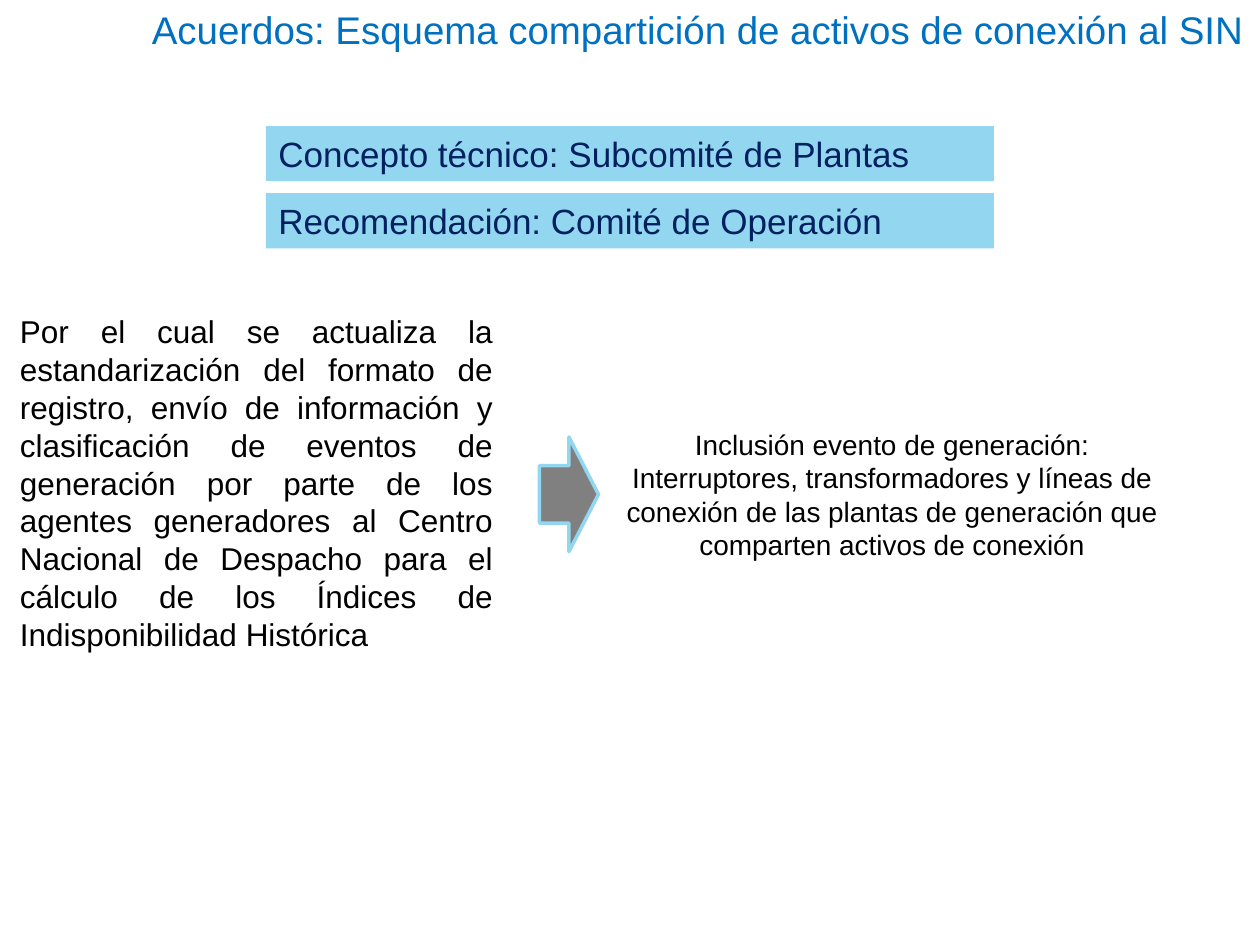
from pptx import Presentation
from pptx.dml.color import RGBColor
from pptx.enum import shapes, text
from pptx.util import Pt

BLUE = RGBColor(0x00, 0x70, 0xC0)
NAVY = RGBColor(0x00, 0x20, 0x60)
SKY = RGBColor(0x92, 0xD6, 0xF0)
GRAY = RGBColor(0x80, 0x80, 0x80)
BLACK = RGBColor(0x00, 0x00, 0x00)


def write(shape, content, size, color, alignment):
    frame = shape.text_frame
    frame.text = content
    frame.word_wrap = True
    frame.auto_size = text.MSO_AUTO_SIZE.NONE
    frame.vertical_anchor = text.MSO_ANCHOR.TOP
    paragraph = frame.paragraphs[0]
    paragraph.alignment = alignment
    font = paragraph.runs[0].font
    font.name = "Arial"
    font.size = Pt(size)
    font.color.rgb = color


presentation = Presentation()
presentation.slide_width = Pt(720)
presentation.slide_height = Pt(540)
slide = presentation.slides.add_slide(presentation.slide_layouts[5])

title = slide.shapes.title
title.left, title.top, title.width, title.height = Pt(67.7), Pt(0), Pt(650), Pt(34)
write(title, "Acuerdos: Esquema compartición de activos de conexión al SIN",
      22, BLUE, text.PP_ALIGN.RIGHT)

# Bodies that issue the concept and the recommendation
bars = slide.shapes.add_group_shape()
bar_labels = ["Concepto técnico: Subcomité de Plantas",
              "Recomendación: Comité de Operación"]
for row, label in enumerate(bar_labels):
    bar = bars.shapes.add_shape(shapes.MSO_SHAPE.RECTANGLE, Pt(152),
                                Pt(72 + 38.4 * row), Pt(416), Pt(31.5))
    bar.shadow.inherit = False
    bar.fill.solid()
    bar.fill.fore_color.rgb = SKY
    bar.line.fill.background()
    write(bar, label, 20, NAVY, text.PP_ALIGN.JUSTIFY)

# Agreement, arrow and its outcome
agreement = slide.shapes.add_textbox(Pt(4.3), Pt(175), Pt(284.4), Pt(204))
write(agreement,
      "Por el cual se actualiza la estandarización del formato de registro, "
      "envío de información y clasificación de eventos de generación por parte "
      "de los agentes generadores al Centro Nacional de Despacho para el cálculo "
      "de los Índices de Indisponibilidad Histórica",
      18, BLACK, text.PP_ALIGN.JUSTIFY)

arrow = slide.shapes.add_shape(shapes.MSO_SHAPE.DOWN_ARROW,
                               Pt(292.4), Pt(265.6), Pt(65.5), Pt(33.8))
arrow.rotation = 270
arrow.shadow.inherit = False
arrow.fill.solid()
arrow.fill.fore_color.rgb = GRAY
arrow.line.color.rgb = SKY
arrow.line.width = Pt(2)

outcome = slide.shapes.add_textbox(Pt(342), Pt(240.5), Pt(335.5), Pt(85))
write(outcome,
      "Inclusión evento de generación: Interruptores, transformadores y líneas "
      "de conexión de las plantas de generación que comparten activos de conexión",
      16, BLACK, text.PP_ALIGN.CENTER)

presentation.save("out.pptx")
